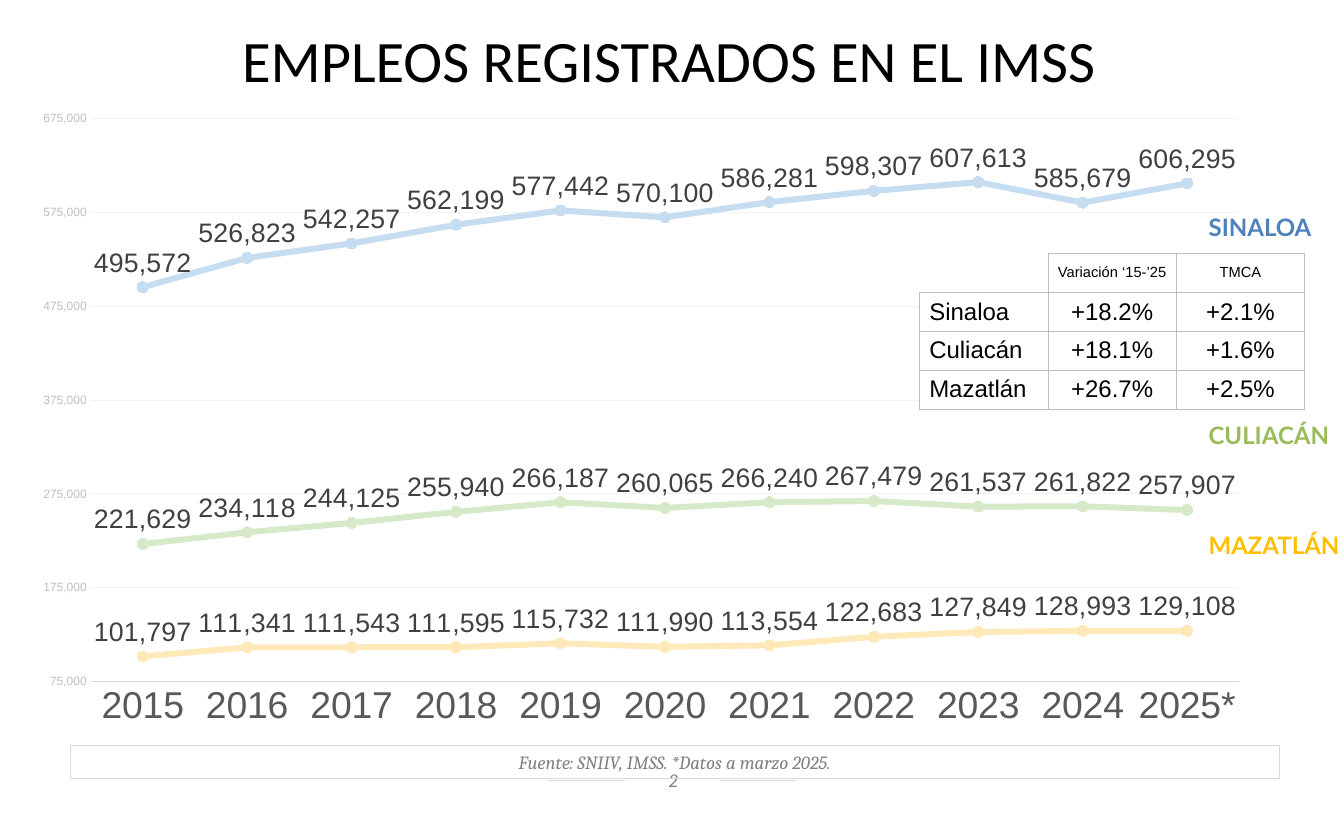
from collections import namedtuple
from dataclasses import dataclass

from lxml.etree import SubElement
from pptx import Presentation
from pptx.chart.data import CategoryChartData
from pptx.dml.color import RGBColor
from pptx.enum.chart import XL_CHART_TYPE as ChartType, XL_LABEL_POSITION as LabelPosition
from pptx.enum.chart import XL_MARKER_STYLE as MarkerStyle, XL_TICK_MARK as TickMark
from pptx.enum.shapes import MSO_CONNECTOR as Connector, MSO_SHAPE as Shape
from pptx.enum.text import MSO_ANCHOR as Anchor, MSO_AUTO_SIZE as AutoSize, PP_ALIGN as Align
from pptx.oxml.ns import qn
from pptx.util import Inches, Pt

Box = namedtuple("Box", "left top width height")
Series = namedtuple("Series", "name values line marker")


@dataclass(frozen=True)
class Theme:
    """Fonts, colours and type sizes of the slide."""
    body: str = "Arial"
    heading: str = "Calibri"
    label: str = "Lato"
    note: str = "Cambria"
    white: str = "FFFFFF"
    black: str = "000000"
    value: str = "404040"
    category: str = "595959"
    muted: str = "808080"
    border: str = "BFBFBF"
    rule: str = "D9D9D9"
    grid: str = "F2F2F2"
    sinaloa: str = "4F81BD"
    culiacan: str = "9BBB59"
    mazatlan: str = "FFC000"
    title_size: int = 44
    category_size: int = 28
    value_size: int = 20
    text_size: int = 18
    note_size: int = 14
    header_size: int = 11
    scale_size: int = 9


THEME = Theme()
YEARS = [str(year) for year in range(2015, 2025)] + ["2025*"]
SERIES = [
    Series("Culiacán", (221629, 234118, 244125, 255940, 266187, 260065, 266240, 267479,
                        261537, 261822, 257907), "D6E9C9", "A9D18E"),
    Series("Mazatlán", (101797, 111341, 111543, 111595, 115732, 111990, 113554, 122683,
                        127849, 128993, 129108), "FFE9B9", "FFD579"),
    Series("Sinaloa", (495572, 526823, 542257, 562199, 577442, 570100, 586281, 598307,
                       607613, 585679, 606295), "C6DCF0", "8FAADC"),
]
GROWTH = [
    ("", "Variación ‘15-’25", "TMCA"),
    ("Sinaloa", "+18.2%", "+2.1%"),
    ("Culiacán", "+18.1%", "+1.6%"),
    ("Mazatlán", "+26.7%", "+2.5%"),
]
LABELS = [
    ("SINALOA", THEME.sinaloa, Box(12.45, 2.14, 1.37, 0.44)),
    ("CULIACÁN", THEME.culiacan, Box(12.45, 4.31, 1.57, 0.44)),
    ("MAZATLÁN", THEME.mazatlan, Box(12.45, 5.46, 1.67, 0.44)),
]


def inches(box):
    """Return the box as lengths."""
    return [Inches(length) for length in box]


def style_font(font, name, size, color, bold=False, italic=False):
    """Set the look of a font."""
    font.name, font.size, font.bold, font.italic = name, Pt(size), bold, italic
    font.color.rgb = RGBColor.from_string(color)


def style_line(line, color, width=0.75):
    """Set the colour and width of a line."""
    line.color.rgb = RGBColor.from_string(color)
    line.width = Pt(width)


def write(frame, text, *look, align=Align.CENTER, **emphasis):
    """Write one styled run and return its paragraph."""
    paragraph = frame.paragraphs[0]
    paragraph.alignment = align
    run = paragraph.add_run()
    run.text = text
    style_font(run.font, *look, **emphasis)
    return paragraph


def set_margins(frame, left, top, right, bottom):
    """Set the four insets of a text frame."""
    frame.margin_left, frame.margin_top = Inches(left), Inches(top)
    frame.margin_right, frame.margin_bottom = Inches(right), Inches(bottom)


def add_title(slide, box):
    """Place the slide title."""
    title = slide.shapes.title
    title.left, title.top, title.width, title.height = inches(box)
    frame = title.text_frame
    set_margins(frame, 0.14, 0.07, 0.14, 0.07)
    frame.vertical_anchor = Anchor.TOP
    frame.auto_size = AutoSize.SHAPE_TO_FIT_TEXT
    paragraph = write(frame, "EMPLEOS REGISTRADOS EN EL IMSS",
                      THEME.heading, THEME.title_size, THEME.black)
    paragraph.line_spacing = 0.6


def set_plot_layout(chart, fractions):
    """Fix the inner plot area as fractions of the chart."""
    plot_area = chart.element.find(".//" + qn("c:plotArea"))
    for old in plot_area.findall(qn("c:layout")):
        plot_area.remove(old)
    layout = plot_area.makeelement(qn("c:layout"))
    plot_area.insert(0, layout)
    manual = SubElement(layout, qn("c:manualLayout"))
    settings = [("layoutTarget", "inner"), ("xMode", "edge"), ("yMode", "edge")]
    for tag, value in settings + list(zip("xywh", fractions)):
        SubElement(manual, qn(f"c:{tag}")).set("val", str(value))


def add_jobs_chart(slide, box):
    """Place the line chart of registered jobs."""
    data = CategoryChartData(number_format="#,##0")
    data.categories = YEARS
    for series in SERIES:
        data.add_series(series.name, series.values)
    chart = slide.shapes.add_chart(ChartType.LINE_MARKERS, *inches(box), data).chart
    chart.has_title = chart.has_legend = False
    style_font(chart.font, THEME.body, 10, THEME.black)
    set_plot_layout(chart, (0.058, 0.03, 0.922, 0.88))
    chart.plots[0].vary_by_categories = False

    years, scale = chart.category_axis, chart.value_axis
    years.major_tick_mark = scale.major_tick_mark = TickMark.NONE
    style_font(years.tick_labels.font, THEME.body, THEME.category_size, THEME.category)
    style_font(scale.tick_labels.font, THEME.body, THEME.scale_size, THEME.border)
    style_line(years.format.line, THEME.rule)
    scale.format.line.fill.background()
    style_line(scale.major_gridlines.format.line, THEME.grid)
    scale.minimum_scale, scale.maximum_scale, scale.major_unit = 75000, 675000, 100000
    scale.tick_labels.number_format = "#,##0"
    scale.tick_labels.number_format_is_linked = False

    for line, series in zip(chart.plots[0].series, SERIES):
        line.smooth = False
        style_line(line.format.line, series.line, 4.5)
        line.marker.style, line.marker.size = MarkerStyle.CIRCLE, 8
        line.marker.format.fill.solid()
        line.marker.format.fill.fore_color.rgb = RGBColor.from_string(series.marker)
        line.marker.format.line.fill.background()
        labels = line.data_labels
        labels.show_value, labels.position = True, LabelPosition.ABOVE
        labels.number_format, labels.number_format_is_linked = "#,##0", False
        style_font(labels.font, THEME.body, THEME.value_size, THEME.value)


def add_region_label(slide, box, text, color):
    """Place the coloured name of a region."""
    frame = slide.shapes.add_textbox(*inches(box)).text_frame
    set_margins(frame, 0.14, 0.07, 0.14, 0.07)
    frame.word_wrap = False
    write(frame, text, THEME.label, THEME.text_size, color, align=Align.LEFT, bold=True)


def set_borders(cell, sides):
    """Draw the given sides of a cell and clear the others."""
    properties = cell._tc.get_or_add_tcPr()
    for index, side in enumerate("LRTB"):
        border = properties.makeelement(qn(f"a:ln{side}"), {"w": str(Pt(0.5))})
        properties.insert(index, border)
        if side in sides:
            fill = SubElement(border, qn("a:solidFill"))
            SubElement(fill, qn("a:srgbClr")).set("val", THEME.border)
        else:
            SubElement(border, qn("a:noFill"))


def add_growth_table(slide, box):
    """Place the table of growth by region."""
    table = slide.shapes.add_table(len(GROWTH), len(GROWTH[0]), *inches(box)).table
    table.first_row = table.horz_banding = False
    for row, texts in enumerate(GROWTH):
        for column, text in enumerate(texts):
            cell = table.cell(row, column)
            cell.fill.solid()
            cell.fill.fore_color.rgb = RGBColor.from_string(THEME.white)
            cell.vertical_anchor = Anchor.MIDDLE
            set_borders(cell, "LRTB" if row or column else "RB")
            if text:
                write(cell.text_frame, text, THEME.body,
                      THEME.text_size if row else THEME.header_size, THEME.black,
                      align=Align.CENTER if column else Align.LEFT)


def add_note_box(slide, box, text):
    """Place a plain rectangle with a small italic note."""
    shape = slide.shapes.add_shape(Shape.RECTANGLE, *inches(box))
    shape.shadow.inherit = False
    shape.fill.background()
    shape.line.fill.background()
    write(shape.text_frame, text, THEME.note, THEME.note_size, THEME.muted, italic=True)
    return shape


def add_page_number(slide, box):
    """Place the page number over its rule."""
    middle = Inches(box.top + box.height / 2)
    rule = slide.shapes.add_connector(Connector.STRAIGHT, Inches(box.left), middle,
                                      Inches(box.left + box.width), middle)
    style_line(rule.line, THEME.rule)
    SubElement(rule._element.spPr, qn("a:effectLst"))
    number = add_note_box(slide, Box(6.51, box.top, 0.99, box.height), "2")
    number.fill.solid()
    number.fill.fore_color.rgb = RGBColor.from_string(THEME.white)
    number.text_frame.vertical_anchor = Anchor.MIDDLE
    set_margins(number.text_frame, 0.12, 0.02, 0.1, 0.05)


def add_source(slide, box):
    """Place the framed source note."""
    source = add_note_box(slide, box, "Fuente: SNIIV, IMSS. *Datos a marzo 2025.")
    style_line(source.line, THEME.rule)
    source.text_frame.vertical_anchor = Anchor.TOP


def main():
    """Build and save the presentation."""
    presentation = Presentation()
    presentation.slide_width, presentation.slide_height = Inches(14), Inches(8.5)
    slide = presentation.slides.add_slide(presentation.slide_layouts[5])
    add_jobs_chart(slide, Box(0.19, 1.04, 12.98, 6.66))
    add_page_number(slide, Box(5.71, 7.99, 2.58, 0.29))
    add_title(slide, Box(-0.03, 0.44, 14, 0.6))
    for text, color, box in LABELS:
        add_region_label(slide, box, text, color)
    add_growth_table(slide, Box(9.58, 2.64, 4.01, 1.62))
    add_source(slide, Box(0.73, 7.77, 12.6, 0.34))
    presentation.save("out.pptx")


if __name__ == "__main__":
    main()
